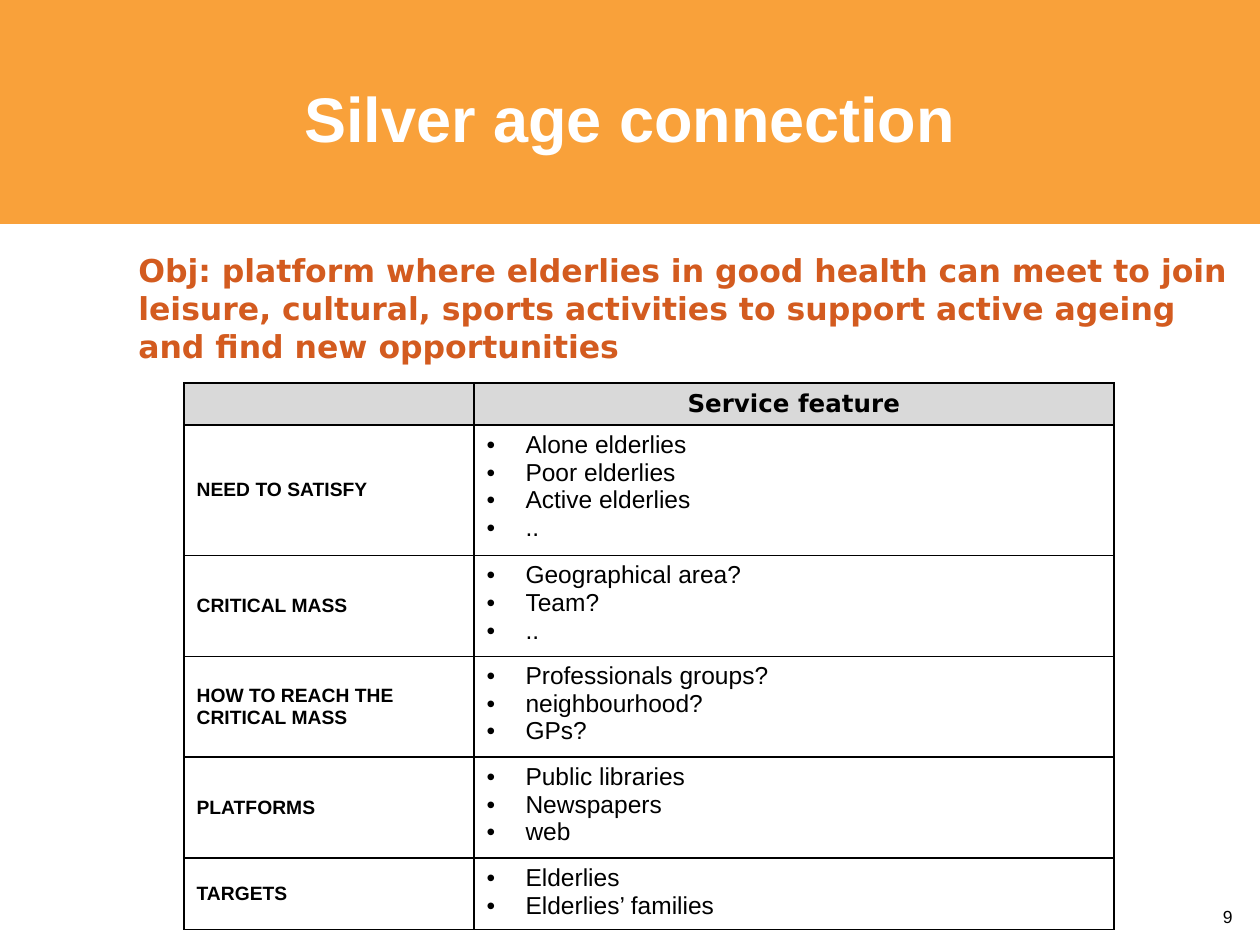
from dataclasses import dataclass

from pptx import Presentation
from pptx.dml.color import RGBColor
from pptx.enum.shapes import MSO_SHAPE as Preset
from pptx.enum.text import MSO_ANCHOR as Anchor, MSO_AUTO_SIZE as AutoSize, PP_ALIGN as Align
from pptx.oxml.ns import qn
from pptx.util import Pt
from lxml.etree import SubElement

EMU_PER_PX = 914400 // 126


@dataclass(frozen=True)
class Style:
    size: int
    color: str
    font: str = "Arial"
    bold: bool = False


@dataclass(frozen=True)
class Theme:
    band: str = "F9A13A"
    header_fill: str = "D9D9D9"
    cell_fill: str = "FFFFFF"
    border: str = "000000"
    border_pt: int = 1
    title: Style = Style(36, "FFFFFF", bold=True)
    objective: Style = Style(18, "D35B1F", "DejaVu Sans", True)
    header: Style = Style(14, "000000", "DejaVu Sans", True)
    label: Style = Style(11, "000000", bold=True)
    item: Style = Style(14, "000000")
    page: Style = Style(10, "000000")


@dataclass(frozen=True)
class Box:
    left: int
    top: int
    width: int
    height: int

    def emu(self) -> tuple:
        return tuple(px(n) for n in (self.left, self.top, self.width, self.height))


@dataclass(frozen=True)
class Feature:
    label: str
    items: tuple
    height: int


THEME = Theme()
TABLE_BOX = Box(184, 383, 930, 517)
COLUMN_WIDTHS = (290, 640)
HEADER_HEIGHT = 41
BULLET_INDENT = 39
FEATURES = (
    Feature("NEED TO SATISFY",
            ("Alone elderlies", "Poor elderlies", "Active elderlies", ".."), 123),
    Feature("CRITICAL MASS", ("Geographical area?", "Team?", ".."), 95),
    Feature("HOW TO REACH THE CRITICAL MASS",
            ("Professionals groups?", "neighbourhood?", "GPs?"), 95),
    Feature("PLATFORMS", ("Public libraries", "Newspapers", "web"), 95),
    Feature("TARGETS", ("Elderlies", "Elderlies’ families"), 68),
)


def px(length: int) -> int:
    return length * EMU_PER_PX


def write(frame, text: str, style: Style, align=Align.LEFT) -> None:
    frame.text = text
    for paragraph in frame.paragraphs:
        paragraph.alignment = align
        for run in paragraph.runs:
            run.font.name = style.font
            run.font.size = Pt(style.size)
            run.font.bold = style.bold
            run.font.color.rgb = RGBColor.from_string(style.color)


def add_text(slide, box: Box, text: str, style: Style, align=Align.LEFT) -> None:
    frame = slide.shapes.add_textbox(*box.emu()).text_frame
    frame.word_wrap = True
    write(frame, text, style, align)


def add_bullets(frame) -> None:
    for paragraph in frame.paragraphs:
        properties = paragraph._p.get_or_add_pPr()
        properties.set("marL", str(px(BULLET_INDENT)))
        properties.set("indent", str(-px(BULLET_INDENT)))
        SubElement(properties, qn("a:buFont"), typeface="Arial")
        SubElement(properties, qn("a:buChar"), char="•")


def format_cell(cell, fill: str, anchor=Anchor.MIDDLE) -> None:
    cell.vertical_anchor = anchor
    properties = cell._tc.get_or_add_tcPr()
    for side in ("a:lnL", "a:lnR", "a:lnT", "a:lnB"):
        line = SubElement(properties, qn(side), w=str(Pt(THEME.border_pt)))
        SubElement(SubElement(line, qn("a:solidFill")), qn("a:srgbClr"), val=THEME.border)
    cell.fill.solid()
    cell.fill.fore_color.rgb = RGBColor.from_string(fill)


def add_title(slide) -> None:
    title = slide.shapes.title
    title.left, title.top, title.width, title.height = Box(63, 38, 1134, 158).emu()
    write(title.text_frame, "Silver age connection", THEME.title, Align.CENTER)
    title.text_frame.vertical_anchor = Anchor.MIDDLE
    title.text_frame.auto_size = AutoSize.NONE

    # Colour band, placed behind the title
    band = slide.shapes.add_shape(Preset.RECTANGLE, *Box(0, 0, 1260, 224).emu())
    band.shadow.inherit = False
    band.fill.solid()
    band.fill.fore_color.rgb = RGBColor.from_string(THEME.band)
    band.line.fill.background()
    title.element.addprevious(band.element)


def add_feature_table(slide) -> None:
    table = slide.shapes.add_table(
        len(FEATURES) + 1, len(COLUMN_WIDTHS), *TABLE_BOX.emu()).table
    table.first_row = False
    table.horz_banding = False
    for column, width in zip(table.columns, COLUMN_WIDTHS):
        column.width = px(width)

    # Header row; the blank corner keeps the header type size
    table.rows[0].height = px(HEADER_HEIGHT)
    corner, heading = table.rows[0].cells
    SubElement(corner.text_frame.paragraphs[0]._p, qn("a:endParaRPr"),
               sz=str(THEME.header.size * 100))
    write(heading.text_frame, "Service feature", THEME.header, Align.CENTER)
    for cell in (corner, heading):
        format_cell(cell, THEME.header_fill)

    # One row per feature
    for index, feature in enumerate(FEATURES, start=1):
        row = table.rows[index]
        row.height = px(feature.height)
        label, items = row.cells
        write(label.text_frame, feature.label, THEME.label)
        format_cell(label, THEME.cell_fill)
        write(items.text_frame, "\n".join(feature.items), THEME.item)
        add_bullets(items.text_frame)
        format_cell(items, THEME.cell_fill, Anchor.TOP)


def main() -> None:
    deck = Presentation()
    deck.slide_width, deck.slide_height = px(1260), px(945)
    slide = deck.slides.add_slide(deck.slide_layouts[5])

    add_title(slide)
    add_text(slide, Box(1063, 900, 182, 30), "9", THEME.page, Align.RIGHT)
    add_text(slide, Box(126, 245, 1123, 699),
             "Obj: platform where elderlies in good health can meet to join leisure, "
             "cultural, sports activities to support active ageing and find new "
             "opportunities", THEME.objective)
    add_feature_table(slide)

    deck.save("out.pptx")


if __name__ == "__main__":
    main()
